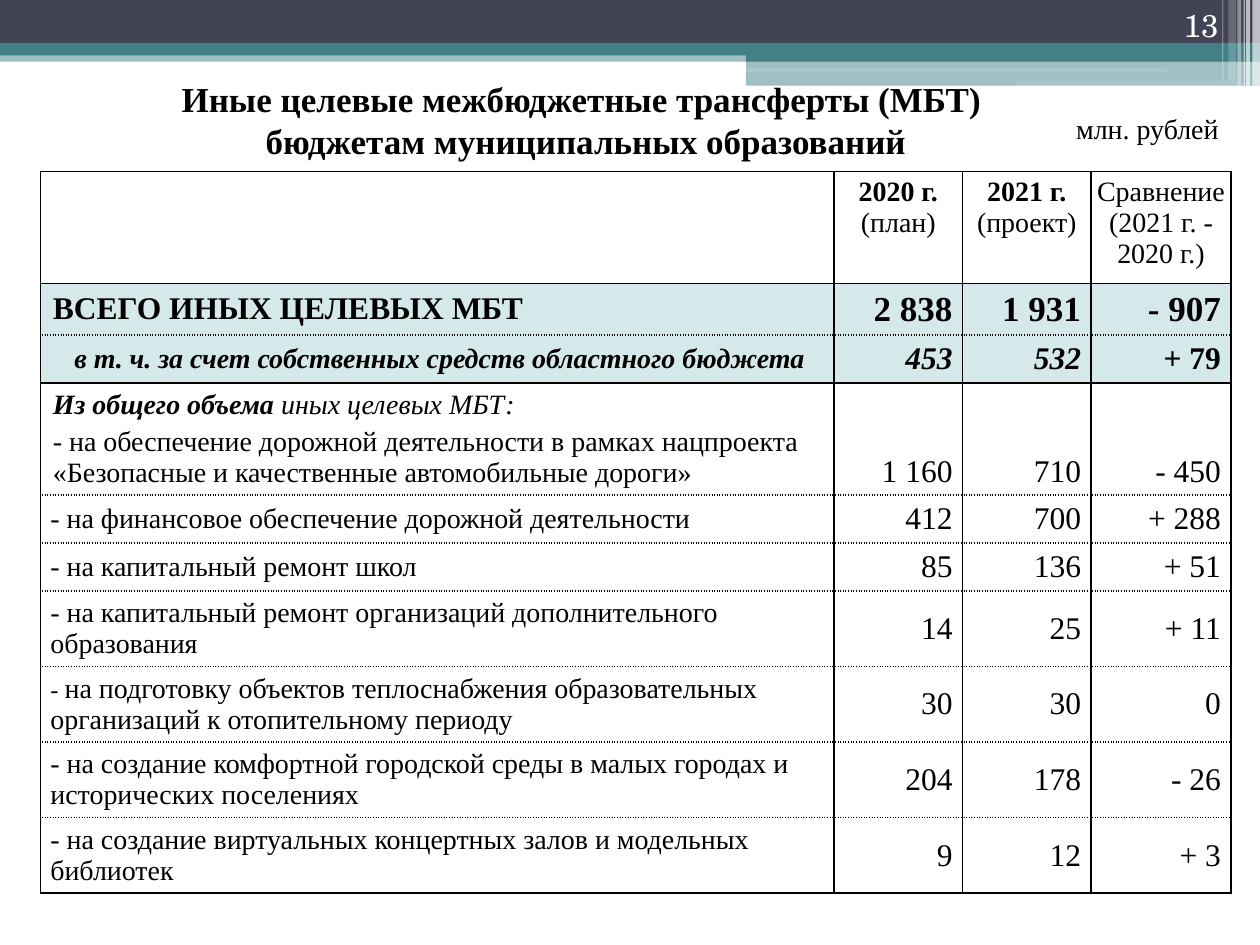
import dataclasses

import lxml.etree
import pptx
import pptx.dml.color
import pptx.enum.shapes
import pptx.enum.text
import pptx.oxml.ns
import pptx.util

ALIGN = pptx.enum.text.PP_ALIGN
ANCHOR = pptx.enum.text.MSO_ANCHOR
SHAPE = pptx.enum.shapes.MSO_SHAPE
COLUMNS, ROWS = 1000, 750


@dataclasses.dataclass(frozen=True)
class Theme:
    serif: str = "Times New Roman"
    number_serif: str = "TeX Gyre Schola"
    black: str = "000000"
    white: str = "FFFFFF"
    navy: str = "424456"
    teal: str = "438086"
    pale_teal: str = "D6E9EA"
    small: int = 14
    text: int = 16
    value: int = 18
    heading: int = 20
    border: int = 1


THEME = Theme()


def grid(cells):
    return pptx.util.Inches(cells / 100)


@dataclasses.dataclass(frozen=True)
class Box:
    left: float
    top: float
    width: float
    height: float

    def inner(self, left, top, width, height):
        return Box(self.left + left, self.top + top, width, height)

    def lengths(self):
        return [grid(cells) for cells in (self.left, self.top, self.width, self.height)]


@dataclasses.dataclass(frozen=True)
class Span:
    text: str
    bold: bool = False
    italic: bool = False
    size: int = None


def color(value):
    return pptx.dml.color.RGBColor.from_string(value)


def write_para(para, spans, size, align, face=THEME.serif, ink=THEME.black):
    para.alignment = align
    para.font.size = pptx.util.Pt(size)
    para.font.name = face
    para.font.color.rgb = color(ink)
    for span in spans:
        for index, line in enumerate(span.text.split("\n")):
            if index:
                para.add_line_break()
            run = para.add_run()
            run.text = line
            run.font.bold = span.bold
            run.font.italic = span.italic
            if span.size:
                run.font.size = pptx.util.Pt(span.size)


def add_stripe(page, box, fill, opacity=100, kind=SHAPE.RECTANGLE):
    stripe = page.shapes.add_shape(kind, *box.lengths())
    stripe.shadow.inherit = False
    stripe.line.fill.background()
    stripe.fill.solid()
    stripe.fill.fore_color.rgb = color(fill)
    if opacity < 100:
        tint = stripe.fill._xPr.find(".//" + pptx.oxml.ns.qn("a:srgbClr"))
        alpha = lxml.etree.SubElement(tint, pptx.oxml.ns.qn("a:alpha"))
        alpha.set("val", str(opacity * 1000))


def add_banner(page, box):
    for place, fill, opacity in (
        ((0, 40, box.width, 9), THEME.teal, 50),
        ((0, 0, box.width, 34), THEME.navy, 100),
        ((0, 34, box.width, 10), THEME.teal, 100),
        ((592, 39, 408, 10), THEME.teal, 100),
        ((592, 48, 408, 20), THEME.teal, 50),
    ):
        add_stripe(page, box.inner(*place), fill, opacity)
    for place in ((591, 54, 335, 3), (806, 64, 175, 4)):
        add_stripe(page, box.inner(*place), THEME.white, 11, SHAPE.ROUNDED_RECTANGLE)
    for left, width, height, opacity in (
        (994, 6, 68, 65), (989, 3, 68, 65), (987, 1, 68, 60),
        (982, 3, 68, 40), (975, 6, 64, 20), (970, 1, 64, 30),
    ):
        add_stripe(page, box.inner(left, 0, width, height), THEME.white, opacity)


def add_title(page, box, text):
    title = page.shapes.title
    title.left, title.top, title.width, title.height = box.lengths()
    frame = title.text_frame
    frame.word_wrap = True
    frame.auto_size = pptx.enum.text.MSO_AUTO_SIZE.NONE
    frame.vertical_anchor = ANCHOR.MIDDLE
    write_para(frame.paragraphs[0], [Span(text, bold=True)], THEME.heading, ALIGN.CENTER)


def add_label(page, box, text, size, anchor, face, ink):
    frame = page.shapes.add_textbox(*box.lengths()).text_frame
    frame.word_wrap = True
    frame.vertical_anchor = anchor
    write_para(frame.paragraphs[0], [Span(text)], size, ALIGN.RIGHT, face, ink)


def set_borders(cell, dashes):
    properties = cell._tc.get_or_add_tcPr()
    for side, dash in zip("LRTB", dashes):
        line = lxml.etree.SubElement(properties, pptx.oxml.ns.qn("a:ln" + side))
        line.set("w", str(pptx.util.Pt(THEME.border)))
        fill = lxml.etree.SubElement(line, pptx.oxml.ns.qn("a:solidFill"))
        lxml.etree.SubElement(fill, pptx.oxml.ns.qn("a:srgbClr")).set("val", THEME.black)
        lxml.etree.SubElement(line, pptx.oxml.ns.qn("a:prstDash")).set("val", dash)


def fill_cell(cell, paras, size, align, anchor, margins):
    cell.vertical_anchor = anchor
    cell.margin_left, cell.margin_right, cell.margin_top, cell.margin_bottom = map(grid, margins)
    for index, spans in enumerate(paras):
        para = cell.text_frame.paragraphs[0] if index == 0 else cell.text_frame.add_paragraph()
        write_para(para, spans, size, align)
        if index:
            para.space_before = pptx.util.Pt(0.2 * size if align == ALIGN.LEFT else 0)


def add_transfers(page, box, widths, heights, header, records):
    table = page.shapes.add_table(len(heights), len(widths), *box.lengths()).table
    table.first_row = table.horz_banding = False
    for column, width in zip(table.columns, widths):
        column.width = grid(width)
    for row, height in zip(table.rows, heights):
        row.height = grid(height)

    solid_edges = {0, 1, 3, len(heights)}
    edges = ["solid" if edge in solid_edges else "sysDot" for edge in range(len(heights) + 1)]
    fills = [THEME.white] + [THEME.pale_teal] * 2
    for row_index, row in enumerate(table.rows):
        for cell in row.cells:
            set_borders(cell, ("solid", "solid", edges[row_index], edges[row_index + 1]))
            if row_index < len(fills):
                cell.fill.solid()
                cell.fill.fore_color.rgb = color(fills[row_index])
            else:
                cell.fill.background()

    for column_index, paras in enumerate(header, 1):
        fill_cell(table.cell(0, column_index), paras, THEME.text, ALIGN.CENTER, ANCHOR.TOP, (4, 4, 4, 4))

    for row_index, (label, values) in enumerate(records, 1):
        is_total, is_own = row_index == 1, row_index == 2
        label_size = THEME.value if is_total else THEME.text
        value_size = THEME.heading if is_total else THEME.value
        label_left = 27 if is_own else 10 if row_index < 4 else 8
        value_anchor = ANCHOR.BOTTOM if row_index == 3 else ANCHOR.MIDDLE
        fill_cell(table.cell(row_index, 0), label, label_size, ALIGN.LEFT, ANCHOR.MIDDLE,
                  (label_left, 10, 5, 5))
        for column_index, value in enumerate(values, 1):
            span = Span(value, bold=is_total or is_own, italic=is_own and column_index < 3)
            fill_cell(table.cell(row_index, column_index), [[span]], value_size, ALIGN.RIGHT,
                      value_anchor, (10, 8, 5, 5))


HEADER = [
    [[Span("2020 г.", bold=True)], [Span("(план)")]],
    [[Span("2021 г.", bold=True)], [Span("(проект)")]],
    [[Span("Сравнение (2021 г. -\n2020 г.)")]],
]

RECORDS = [
    ([[Span("ВСЕГО ИНЫХ ЦЕЛЕВЫХ МБТ", bold=True)]], ("2 838", "1 931", "- 907")),
    ([[Span("в т. ч. за счет собственных средств областного бюджета", bold=True, italic=True)]],
     ("453", "532", "+ 79")),
    ([[Span("Из общего объема ", bold=True, italic=True), Span("иных целевых МБТ:", italic=True)],
      [Span("- на обеспечение дорожной деятельности в рамках нацпроекта "
            "«Безопасные и качественные автомобильные дороги»")]], ("1 160", "710", "- 450")),
    ([[Span("- ", italic=True), Span("на финансовое обеспечение дорожной деятельности")]],
     ("412", "700", "+ 288")),
    ([[Span("- на капитальный ремонт школ")]], ("85", "136", "+ 51")),
    ([[Span("- на капитальный ремонт организаций дополнительного образования")]],
     ("14", "25", "+ 11")),
    ([[Span("- ", italic=True, size=THEME.small),
       Span("на подготовку объектов теплоснабжения образовательных организаций "
            "к отопительному периоду")]], ("30", "30", "0")),
    ([[Span("- на создание комфортной городской среды в малых городах и исторических поселениях")]],
     ("204", "178", "- 26")),
    ([[Span("- на создание виртуальных концертных залов и модельных библиотек")]],
     ("9", "12", "+ 3")),
]


def main():
    deck = pptx.Presentation()
    deck.slide_width, deck.slide_height = grid(COLUMNS), grid(ROWS)
    page = deck.slides.add_slide(deck.slide_layouts.get_by_name("Title Only"))
    add_banner(page, Box(0, 0, COLUMNS, 68))
    add_title(page, Box(65, 68, 800, 53),
              "Иные целевые межбюджетные трансферты (МБТ) \nбюджетам муниципальных образований")
    widths = [630, 102, 102, 111]
    heights = [89, 41, 38, 89, 38, 38] + [60] * 4
    add_transfers(page, Box(32, 136, sum(widths), sum(heights)), widths, heights, HEADER, RECORDS)
    add_label(page, Box(894, 0, 83, 40), "13", THEME.value, ANCHOR.BOTTOM,
              THEME.number_serif, THEME.white)
    add_label(page, Box(809, 84, 168, 37), "млн. рублей", THEME.text, ANCHOR.TOP,
              THEME.serif, THEME.black)
    deck.save("out.pptx")


if __name__ == "__main__":
    main()
